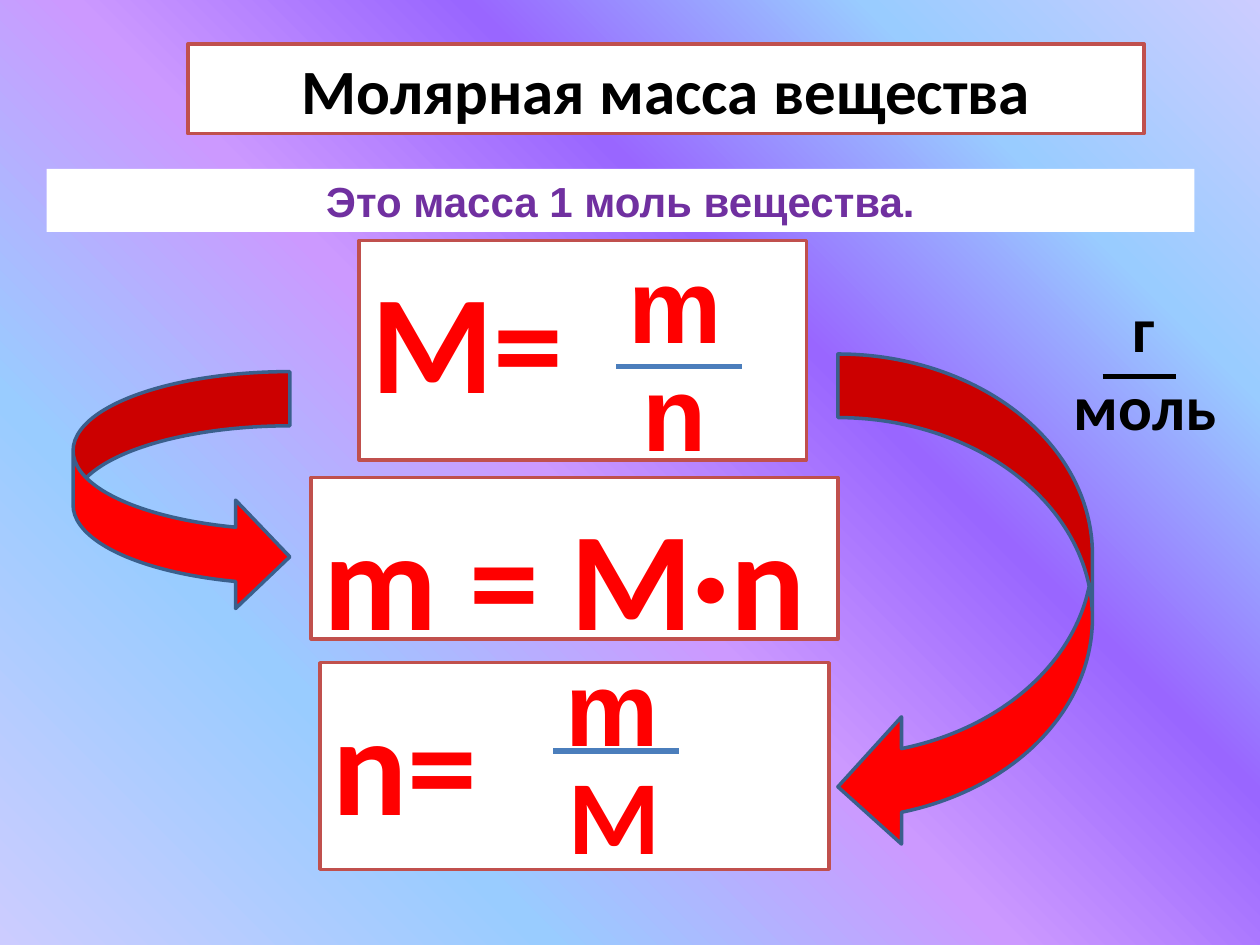
from lxml.etree import SubElement
from pptx import Presentation
from pptx.dml.color import RGBColor
from pptx.enum.shapes import MSO_CONNECTOR, MSO_SHAPE
from pptx.enum.text import MSO_ANCHOR, PP_ALIGN
from pptx.oxml.ns import qn
from pptx.util import Inches, Pt

COLUMNS, ROWS = 100, 75
WIDTH, HEIGHT = Inches(10), Inches(7.5)
COLORS = {
    "white": "FFFFFF", "black": "000000", "red": "FF0000", "purple": "7030A0",
    "frame": "C0504D", "bar": "4B7EBC", "arrow_edge": "3A5F8C",
}
BACKGROUND_STOPS = [(0, "CCCCFF"), (18, "99CCFF"), (36, "9966FF"),
                    (54, "CC99FF"), (75, "99CCFF"), (100, "CCCCFF")]


def color(name):
    return RGBColor.from_string(COLORS[name])


def across(columns):
    return round(WIDTH * columns / COLUMNS)


def down(rows):
    return round(HEIGHT * rows / ROWS)


def place(box):
    """Turn left, top, width, height in grid units into slide lengths."""
    left, top, width, height = box
    return across(left), down(top), across(width), down(height)


def write(shape, text, size, ink="red", font="Calibri", align=PP_ALIGN.LEFT,
          anchor=MSO_ANCHOR.TOP, wrap=True, top_inset=0.05):
    frame = shape.text_frame
    frame.word_wrap = wrap
    frame.vertical_anchor = anchor
    frame.margin_top = Inches(top_inset)
    para = frame.paragraphs[0]
    para.alignment = align
    span = para.add_run()
    span.text = text
    span.font.size = Pt(size)
    span.font.name = font
    span.font.bold = True
    span.font.color.rgb = color(ink)


def add_label(shapes, box, text, size, **style):
    write(shapes.add_textbox(*place(box)), text, size, **style)


def add_filled(page, kind, box, fill, edge=None):
    shape = page.shapes.add_shape(kind, *place(box))
    shape.shadow.inherit = False
    shape.fill.solid()
    shape.fill.fore_color.rgb = color(fill)
    if edge:
        shape.line.color.rgb = color(edge)
        shape.line.width = Pt(2)
    else:
        shape.line.fill.background()
    return shape


def add_bar(shapes, left, top, width, ink, weight):
    bar = shapes.add_connector(MSO_CONNECTOR.STRAIGHT, across(left), down(top),
                               across(left + width), down(top))
    bar.line.color.rgb = color(ink)
    bar.line.width = Pt(weight)
    SubElement(bar.element.spPr, qn("a:effectLst"))


def paint_background(page):
    """Fill with a gradient that spreads from the top right corner."""
    fill = page.background.fill
    fill.gradient()
    gradient = page.element.find(".//" + qn("a:gradFill"))
    for child in list(gradient):
        gradient.remove(child)
    stops = SubElement(gradient, qn("a:gsLst"))
    for percent, value in BACKGROUND_STOPS:
        stop = SubElement(stops, qn("a:gs"), pos=str(percent * 1000))
        SubElement(stop, qn("a:srgbClr"), val=value)
    spread = SubElement(gradient, qn("a:path"))
    spread.set("path", "circle")
    SubElement(spread, qn("a:fillToRect"), l="100000", b="100000")


def add_banner(page, box, text, size, edge=None, **style):
    banner = add_filled(page, MSO_SHAPE.RECTANGLE, box, "white", edge)
    write(banner, text, size, align=PP_ALIGN.CENTER, anchor=MSO_ANCHOR.MIDDLE, **style)


def add_formula(page, box, text):
    panel = add_filled(page, MSO_SHAPE.RECTANGLE, box, "white", "frame")
    write(panel, text, 80, top_inset=0.1)


def add_fraction(page, box, bar, upper, lower):
    """Place a bar and two (text, column, row, font) terms from the box corner."""
    left, top = box[:2]
    for text, column, row, font in (upper, lower):
        add_label(page.shapes, (left + column, top + row, 11.8, 11.1), text, 60, font=font)
    add_bar(page.shapes, left + bar[0], top + bar[1], 10, "bar", 3.25)


def add_unit(page, box):
    left, top, width, _ = box
    group = page.shapes.add_group_shape()
    add_label(group.shapes, (left + 4.7, top, 3.8, 7.1), "г", 36, ink="black", wrap=False)
    add_label(group.shapes, (left, top + 6.2, width, 7.1), "моль", 36, ink="black", wrap=False)
    add_bar(group.shapes, left + 3.3, top + 7.4, 5.8, "black", 3)


def main():
    deck = Presentation()
    deck.slide_width, deck.slide_height = WIDTH, HEIGHT
    page = deck.slides.add_slide(deck.slide_layouts[6])
    paint_background(page)

    add_banner(page, (14.9, 3.5, 75.9, 7.1), "Молярная масса вещества", 36,
               edge="frame", ink="black")
    add_banner(page, (3.7, 13.4, 91.1, 5), "Это масса 1 моль вещества.", 24,
               ink="purple", font="Arial")
    add_unit(page, (84.2, 22.5, 13.4, 13.3))

    molar_mass = (28.5, 19.1, 35.5, 17.4)
    add_formula(page, molar_mass, "М=")
    add_fraction(page, molar_mass, (20.4, 10),
                 ("m", 20.4, -0.7, "Arial"), ("n", 21.5, 7.9, "Arial"))

    add_formula(page, (24.7, 37.9, 41.8, 12.8), "m = М·n")

    amount = (25.4, 52.6, 40.4, 16.4)
    add_formula(page, amount, "n=")
    add_fraction(page, amount, (18.5, 7),
                 ("m", 18.5, -2.2, "Arial"), ("M", 18.7, 6.4, "Calibri"))

    add_filled(page, MSO_SHAPE.CURVED_RIGHT_ARROW, (5.8, 29.5, 17.2, 19), "red", "arrow_edge")
    add_filled(page, MSO_SHAPE.CURVED_LEFT_ARROW, (66.5, 28.1, 20.2, 39.4), "red", "arrow_edge")
    deck.save("out.pptx")


if __name__ == "__main__":
    main()
